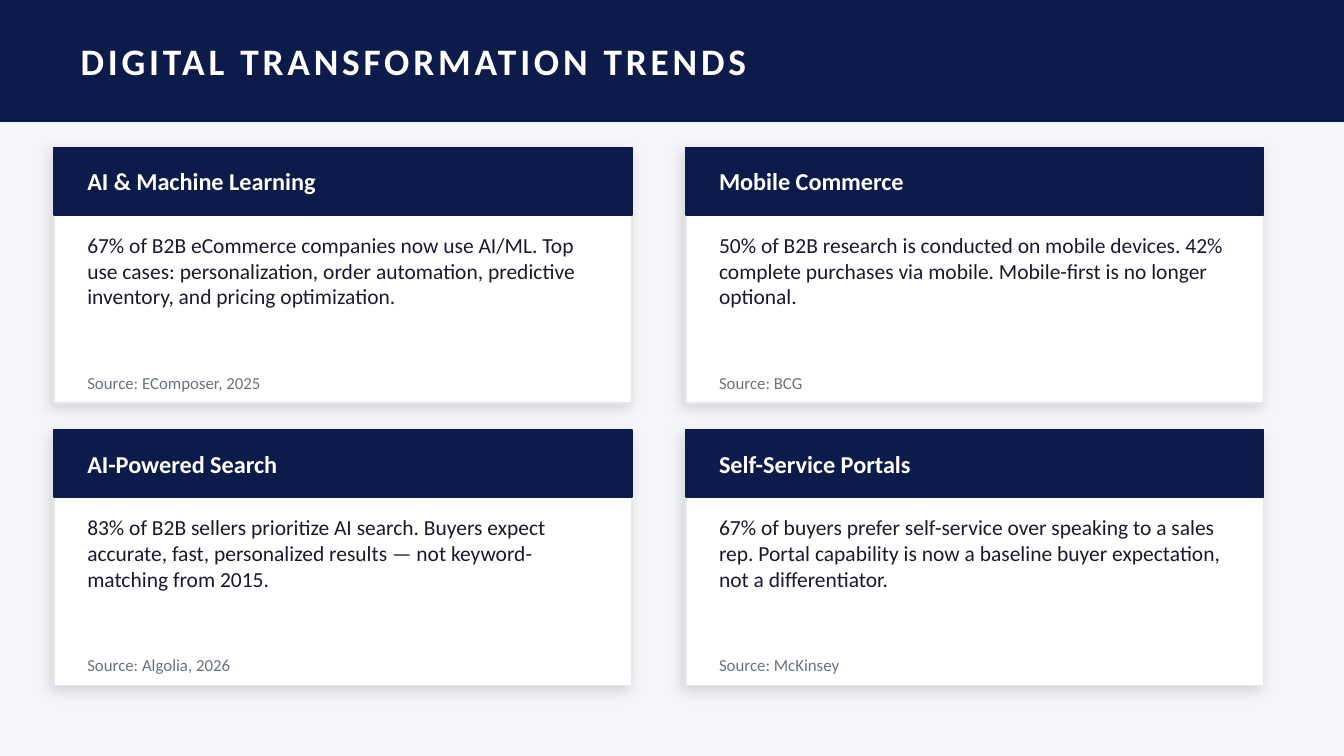
from lxml.etree import SubElement
from pptx import Presentation
from pptx.dml.color import RGBColor
from pptx.enum.shapes import MSO_SHAPE
from pptx.enum.text import MSO_ANCHOR, MSO_AUTO_SIZE, PP_ALIGN
from pptx.oxml.ns import qn
from pptx.util import Cm, Pt

TITLE = "DIGITAL TRANSFORMATION TRENDS"
TRENDS = [
    ("AI & Machine Learning",
     "67% of B2B eCommerce companies now use AI/ML. Top use cases: personalization, "
     "order automation, predictive inventory, and pricing optimization.",
     "Source: EComposer, 2025"),
    ("Mobile Commerce",
     "50% of B2B research is conducted on mobile devices. 42% complete purchases "
     "via mobile. Mobile-first is no longer optional.",
     "Source: BCG"),
    ("AI-Powered Search",
     "83% of B2B sellers prioritize AI search. Buyers expect accurate, fast, "
     "personalized results — not keyword-matching from 2015.",
     "Source: Algolia, 2026"),
    ("Self-Service Portals",
     "67% of buyers prefer self-service over speaking to a sales rep. Portal "
     "capability is now a baseline buyer expectation, not a differentiator.",
     "Source: McKinsey"),
]

FONT = "Calibri"
NAVY = RGBColor(0x0D, 0x1B, 0x4B)
WHITE = RGBColor(0xFF, 0xFF, 0xFF)
PAPER = RGBColor(0xF5, 0xF6, 0xFA)
BORDER = RGBColor(0xE5, 0xE7, 0xEB)
INK = RGBColor(0x1A, 0x1A, 0x2E)
GRAY = RGBColor(0x6B, 0x72, 0x80)

# Lengths in centimetres
PAGE_W, PAGE_H = 25.4, 14.29
BANNER_H = 2.29
COLUMNS = 2
CARD_LEFT, CARD_TOP = 1.02, 2.79
CARD_W, CARD_H = 10.92, 4.83
GAP_X, GAP_Y = 1.02, 0.51
HEADER_H = 1.27
PAD = 0.38


def add_rect(page, left, top, width, height, fill, line):
    rect = page.shapes.add_shape(
        MSO_SHAPE.RECTANGLE, Cm(left), Cm(top), Cm(width), Cm(height))
    rect.fill.solid()
    rect.fill.fore_color.rgb = fill
    rect.line.color.rgb = line
    rect.line.width = Pt(1)
    rect.shadow.inherit = False
    return rect


def add_soft_shadow(shape):
    effects = shape._element.spPr.find(qn("a:effectLst"))
    shadow = SubElement(effects, qn("a:outerShdw"), blurRad=str(Pt(8)),
                        dist=str(Pt(3)), dir=str(135 * 60000),
                        algn="bl", rotWithShape="0")
    color = SubElement(shadow, qn("a:srgbClr"), val="000000")
    SubElement(color, qn("a:alpha"), val="12000")


def write(box, text, size, color, bold=False, anchor=MSO_ANCHOR.MIDDLE):
    frame = box.text_frame
    frame.text = text
    frame.word_wrap = True
    frame.auto_size = MSO_AUTO_SIZE.NONE
    frame.vertical_anchor = anchor
    para = frame.paragraphs[0]
    para.alignment = PP_ALIGN.LEFT
    span = para.runs[0]
    span.font.name = FONT
    span.font.size = Pt(size)
    span.font.bold = bold
    span.font.color.rgb = color
    return span


def add_text(page, left, top, width, height, *args, **style):
    box = page.shapes.add_textbox(Cm(left), Cm(top), Cm(width), Cm(height))
    write(box, *args, **style)


def add_title(page):
    add_rect(page, 0, 0, PAGE_W, BANNER_H, NAVY, NAVY)
    title = page.shapes.title
    title.left, title.top = Cm(1.27), Cm(0)
    title.width, title.height = Cm(22.86), Cm(BANNER_H)
    span = write(title, TITLE, 20, WHITE, bold=True)
    span.font._element.set("spc", "200")
    page.shapes._spTree.append(title._element)  # bring in front of the banner


def add_card(page, left, top, heading, body, source):
    add_soft_shadow(add_rect(page, left, top, CARD_W, CARD_H, WHITE, BORDER))
    add_rect(page, left, top, CARD_W, HEADER_H, NAVY, NAVY)
    text_left = left + PAD
    add_text(page, text_left, top, 10.16, HEADER_H, heading, 13, WHITE, bold=True)
    add_text(page, text_left, top + 1.47, 10.03, 2.54, body, 11.5, INK,
             anchor=MSO_ANCHOR.TOP)
    add_text(page, text_left, top + 4.19, 9.65, 0.51, source, 9, GRAY)


def main():
    deck = Presentation()
    deck.slide_width, deck.slide_height = Cm(PAGE_W), Cm(PAGE_H)
    page = deck.slides.add_slide(deck.slide_layouts.get_by_name("Title Only"))
    page.background.fill.solid()
    page.background.fill.fore_color.rgb = PAPER

    add_title(page)
    for index, trend in enumerate(TRENDS):
        row, column = divmod(index, COLUMNS)
        add_card(page, CARD_LEFT + column * (CARD_W + GAP_X),
                 CARD_TOP + row * (CARD_H + GAP_Y), *trend)
    deck.save("out.pptx")


if __name__ == "__main__":
    main()
